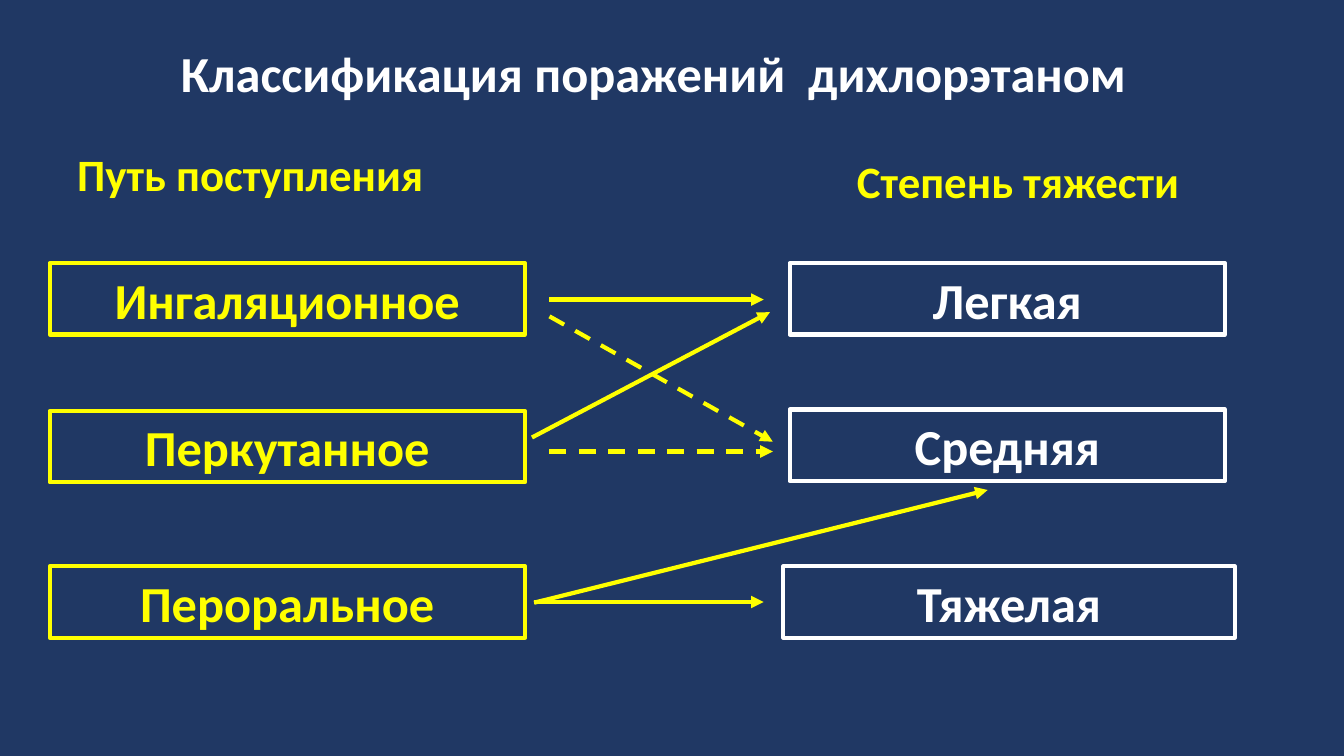
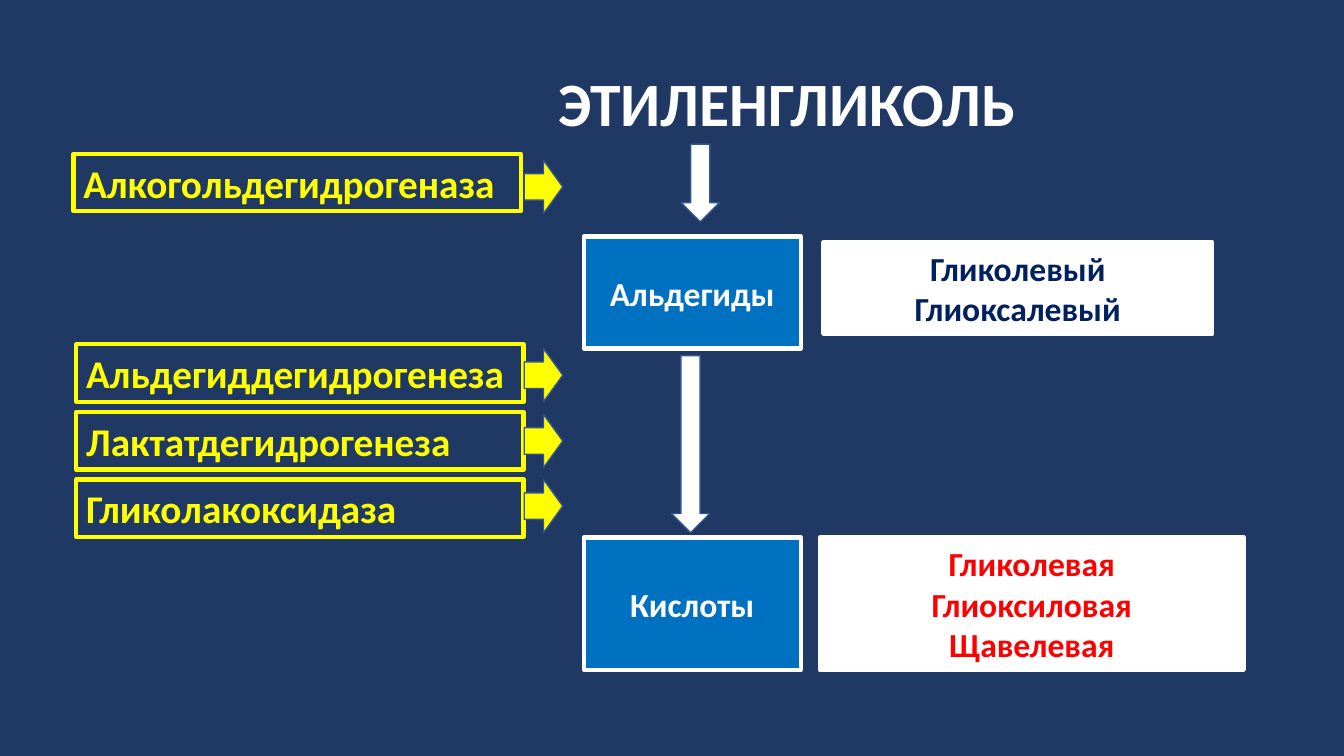
"""Build two slides on dichloroethane injuries and ethylene glycol breakdown."""
from lxml.etree import SubElement
from pptx import Presentation
from pptx.dml.color import RGBColor
from pptx.enum.dml import MSO_LINE
from pptx.enum.shapes import MSO_CONNECTOR, MSO_SHAPE
from pptx.enum.text import MSO_ANCHOR, PP_ALIGN
from pptx.oxml.ns import qn
from pptx.util import Pt

NAVY = RGBColor(0x20, 0x38, 0x64)
INK = RGBColor(0x00, 0x20, 0x60)
BLUE = RGBColor(0x00, 0x70, 0xC0)
EDGE = RGBColor(0x32, 0x54, 0x91)
YELLOW = RGBColor(0xFF, 0xFF, 0x00)
WHITE = RGBColor(0xFF, 0xFF, 0xFF)
RED = RGBColor(0xFF, 0x00, 0x00)
FONT = "Calibri"


def write(shape, text, size, color, align=PP_ALIGN.CENTER):
    """Put bold text into a shape."""
    frame = shape.text_frame
    frame.word_wrap = True
    frame.vertical_anchor = MSO_ANCHOR.MIDDLE
    frame.text = text
    for line in frame.paragraphs:
        line.alignment = align
        for run in line.runs:
            font = run.font
            font.name, font.size, font.bold = FONT, Pt(size), True
            font.color.rgb = color


def label(slide, place, text, size, color, align=PP_ALIGN.CENTER):
    """Add free text without a frame."""
    write(slide.shapes.add_textbox(*map(Pt, place)), text, size, color, align)


def title(slide, place, text, size):
    """Add the white heading of a slide."""
    label(slide, place, text, size, WHITE)


def block(slide, kind, place, fill, edge, width):
    """Add a preset shape with a fill and an outline."""
    shape = slide.shapes.add_shape(kind, *map(Pt, place))
    shape.shadow.inherit = False
    if fill is None:
        shape.fill.background()
    else:
        shape.fill.solid()
        shape.fill.fore_color.rgb = fill
    shape.line.color.rgb = edge
    shape.line.width = Pt(width)
    return shape


def box(slide, place, text, size, color, edge, fill=None, align=PP_ALIGN.CENTER):
    """Add a framed box with text."""
    shape = block(slide, MSO_SHAPE.RECTANGLE, place, fill, edge, 3)
    write(shape, text, size, color, align)


def arrow(slide, start, end, dashed=False):
    """Add a thin yellow arrow between two points."""
    link = slide.shapes.add_connector(
        MSO_CONNECTOR.STRAIGHT, *map(Pt, start + end))
    link.line.color.rgb = YELLOW
    link.line.width = Pt(3)
    if dashed:
        link.line.dash_style = MSO_LINE.DASH
    props = link._element.spPr
    SubElement(props.find(qn("a:ln")), qn("a:tailEnd"), type="triangle")
    SubElement(props, qn("a:effectLst"))


def injuries(slide):
    """Draw the routes of entry and the grades they lead to."""
    title(slide, (96.5, 26, 741, 51), "Классификация поражений  дихлорэтаном", 36)
    label(slide, (48, 101, 334, 46), "Путь поступления", 32, YELLOW, PP_ALIGN.LEFT)
    label(slide, (605, 106, 294, 46), "Степень тяжести", 32, YELLOW, PP_ALIGN.LEFT)

    routes = (("Ингаляционное", 188), ("Перкутанное", 293.5), ("Пероральное", 404.5))
    for text, top in routes:
        box(slide, (35.5, top, 339.5, 51), text, 36, YELLOW, YELLOW)

    grades = (("Легкая", 564, 188, 311), ("Средняя", 564, 292.5, 311),
              ("Тяжелая", 559.5, 404.5, 322.5))
    for text, left, top, width in grades:
        box(slide, (left, top, width, 51), text, 36, WHITE, WHITE)

    arrow(slide, (392.5, 214), (545.5, 214))
    arrow(slide, (392.5, 226), (552, 315.5), dashed=True)
    arrow(slide, (392.5, 322.5), (552, 322.5), dashed=True)
    arrow(slide, (380, 312.5), (550, 223))
    arrow(slide, (381.5, 430), (545.5, 430))
    arrow(slide, (381.5, 430.5), (705.5, 350))


def glycol(slide):
    """Draw the breakdown steps with the enzymes on their left."""
    title(slide, (388, 42.5, 348.5, 60.5), "ЭТИЛЕНГЛИКОЛЬ", 44)

    steps = (("Альдегиды", 169, 80), ("Кислоты", 384, 94.5))
    for text, top, height in steps:
        box(slide, (417, top, 155, height), text, 24, WHITE, WHITE, BLUE)

    box(slide, (588, 173, 278, 65.5), "Гликолевый\nГлиоксалевый", 24, INK, WHITE, WHITE)
    box(slide, (585.5, 384, 303, 94.5), "Гликолевая\nГлиоксиловая\nЩавелевая",
        24, RED, WHITE, WHITE)

    for place in ((486.5, 103, 27.5, 55.5), (479.5, 254, 27.5, 126.5)):
        block(slide, MSO_SHAPE.DOWN_ARROW, place, WHITE, EDGE, 1)

    enzymes = (("Алкогольдегидрогеназа", 52.5, 110, 114.5),
               ("Альдегиддегидрогенеза", 54.5, 246, 249),
               ("Лактатдегидрогенеза", 54.5, 294.5, 296),
               ("Гликолакоксидаза", 54.5, 342.5, 342.5))
    for text, left, top, tip in enzymes:
        box(slide, (left, top, 319.5, 41), text, 28, YELLOW, YELLOW,
            align=PP_ALIGN.LEFT)
        block(slide, MSO_SHAPE.RIGHT_ARROW, (374.5, tip, 27.5, 38), YELLOW, EDGE, 1)


def main():
    """Build and save the deck."""
    deck = Presentation()
    deck.slide_width, deck.slide_height = Pt(960), Pt(540)
    ground = deck.slide_master.background.fill
    ground.solid()
    ground.fore_color.rgb = NAVY
    for draw in (injuries, glycol):
        draw(deck.slides.add_slide(deck.slide_layouts[6]))
    deck.save("out.pptx")


if __name__ == "__main__":
    main()
